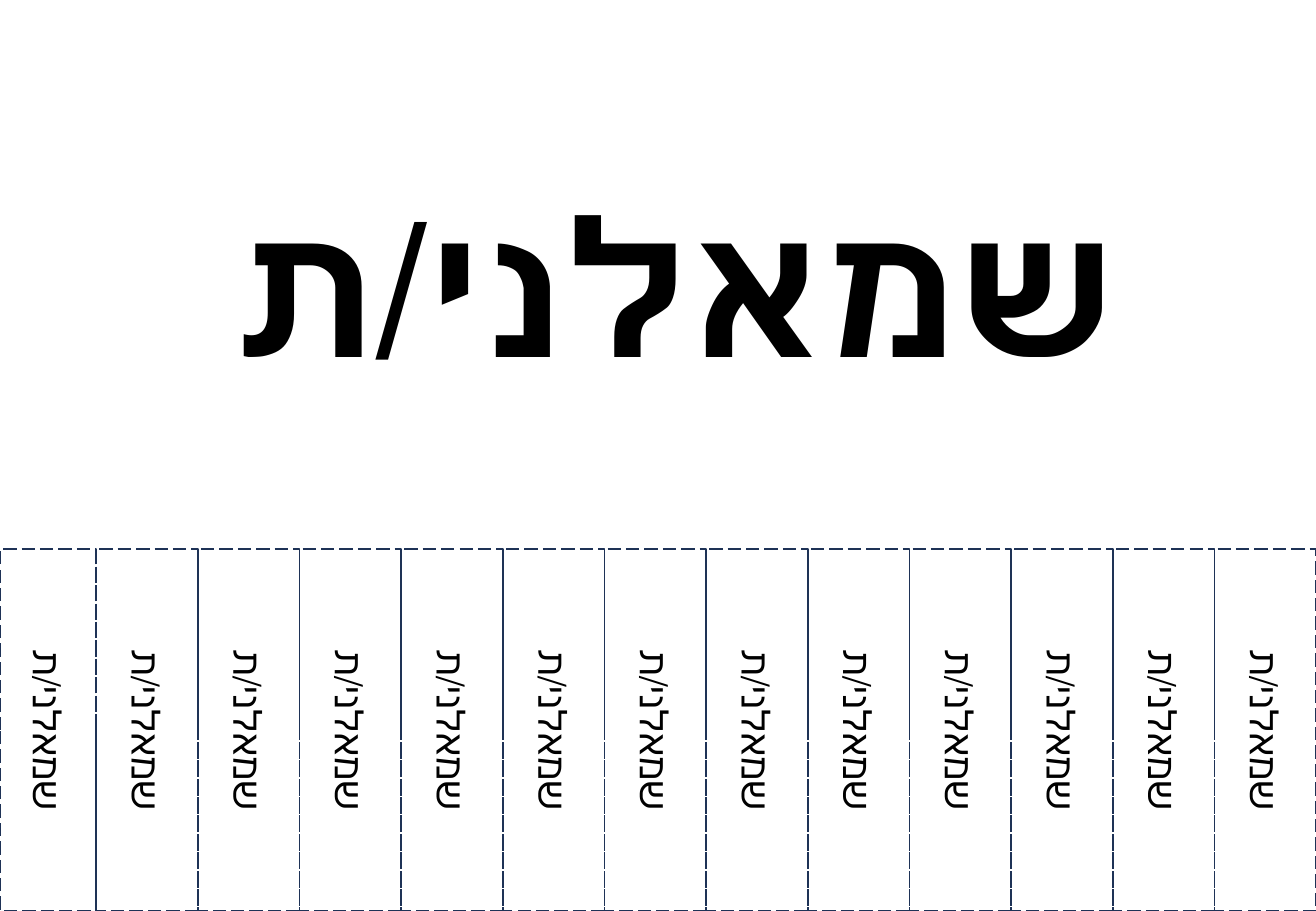
"""Build a tear-off notice with one large word and a row of dashed strips."""
from dataclasses import dataclass

from pptx import Presentation, util as u
from pptx.dml.color import RGBColor
from pptx.enum import dml, shapes, text

WORD = "שמאלני/ת"
STRIP_COUNT = 13
SLIDE_SIZE = (27.51, 19.05)
TITLE_BOX = (1.42, 3.4, 25.37, 5.05)
FIRST_STRIP_WIDTH = 2.01
STRIP_HEIGHT = 7.57
STRIP_MIDDLE = 15.27


@dataclass(frozen=True)
class Theme:
    font: str = "Calibri"
    ink: RGBColor = RGBColor(0x00, 0x00, 0x00)
    cut_line: RGBColor = RGBColor(0x1E, 0x32, 0x56)
    cut_width: float = 1
    title_size: float = 112.1
    strip_size: float = 22.8


THEME = Theme()


def write(shape, content, *, size, bold=False, anchor=text.MSO_ANCHOR.TOP,
          auto_size=text.MSO_AUTO_SIZE.NONE):
    frame = shape.text_frame
    frame.word_wrap = True
    frame.auto_size = auto_size
    frame.vertical_anchor = anchor
    paragraph = frame.paragraphs[0]
    paragraph.alignment = text.PP_ALIGN.CENTER
    run = paragraph.add_run()
    run.text = content
    run.font.name = THEME.font
    run.font.size = u.Pt(size)
    run.font.bold = bold
    run.font.color.rgb = THEME.ink


def add_strip(slide, left, width):
    box_left = left + (width - STRIP_HEIGHT) / 2
    box_top = STRIP_MIDDLE - width / 2
    strip = slide.shapes.add_shape(
        shapes.MSO_SHAPE.RECTANGLE,
        *map(u.Cm, (box_left, box_top, STRIP_HEIGHT, width)))
    strip.rotation = 90
    strip.shadow.inherit = False
    strip.fill.background()
    strip.line.color.rgb = THEME.cut_line
    strip.line.width = u.Pt(THEME.cut_width)
    strip.line.dash_style = dml.MSO_LINE.LONG_DASH
    write(strip, WORD, size=THEME.strip_size, anchor=text.MSO_ANCHOR.MIDDLE)


def main():
    presentation = Presentation()
    presentation.slide_width, presentation.slide_height = map(u.Cm, SLIDE_SIZE)
    slide = presentation.slides.add_slide(presentation.slide_layouts[6])

    title = slide.shapes.add_textbox(*map(u.Cm, TITLE_BOX))
    write(title, WORD, size=THEME.title_size, bold=True,
          auto_size=text.MSO_AUTO_SIZE.SHAPE_TO_FIT_TEXT)

    strip_width = (SLIDE_SIZE[0] - FIRST_STRIP_WIDTH) / (STRIP_COUNT - 1)
    add_strip(slide, 0, FIRST_STRIP_WIDTH)
    for index in range(STRIP_COUNT - 1):
        add_strip(slide, FIRST_STRIP_WIDTH + index * strip_width, strip_width)

    presentation.save("out.pptx")


if __name__ == "__main__":
    main()
